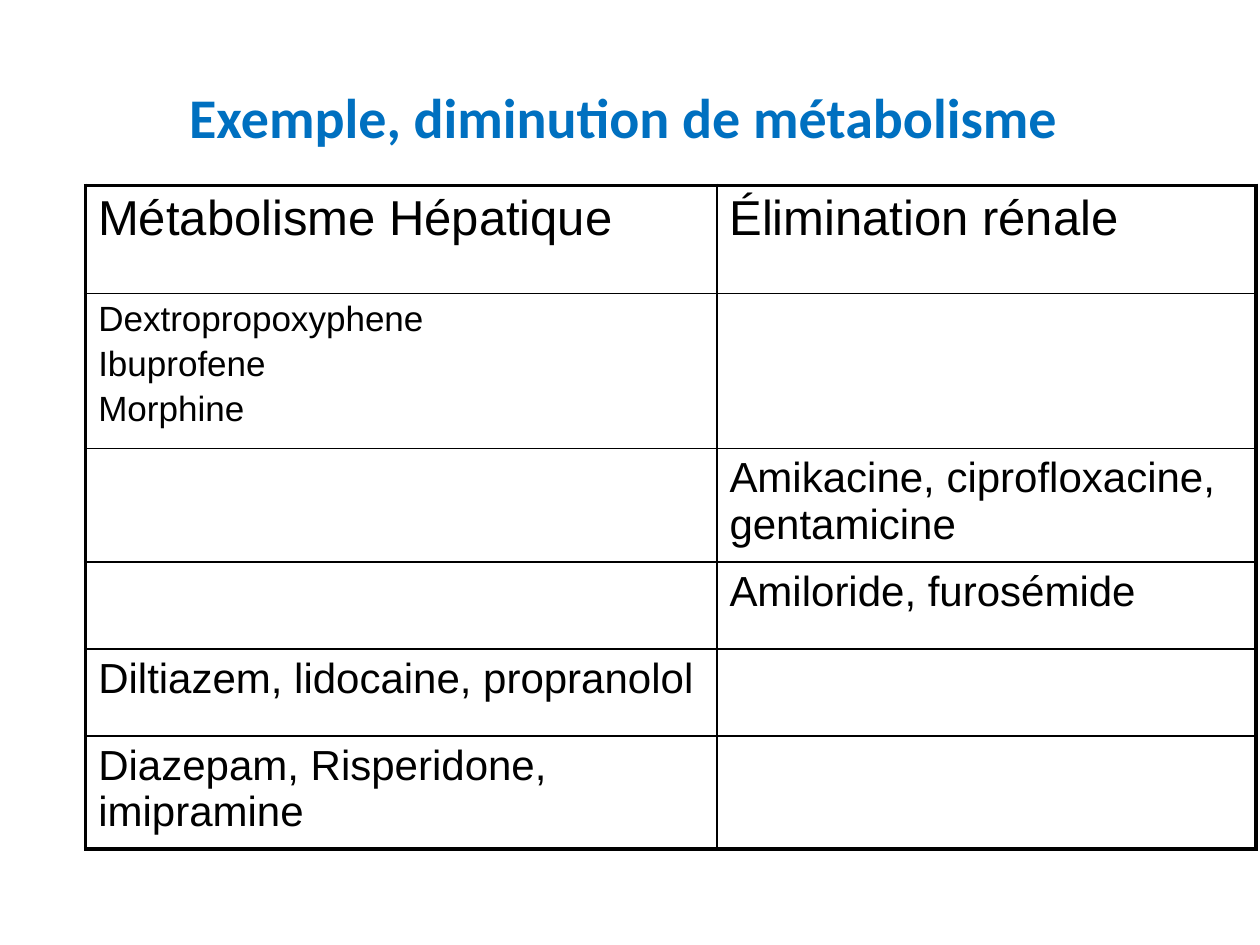
from lxml import etree
from pptx import Presentation
from pptx import util as u
from pptx.dml.color import RGBColor
from pptx.enum import text
from pptx.oxml import ns

BLUE = RGBColor(0x00, 0x70, 0xC0)
BLACK = RGBColor(0, 0, 0)
THICK, THIN = u.Pt(2.25), u.Pt(1)
COLUMN_WIDTHS = [5.01, 4.28]
ROW_HEIGHTS = [0.86, 1.23, 0.9, 0.69, 0.69, 0.9]
ROWS = [
    (28, ["Métabolisme Hépatique"], ["Élimination rénale"]),
    (20, ["Dextropropoxyphene", "Ibuprofene", "Morphine"], []),
    (24, [], ["Amikacine, ciprofloxacine, gentamicine"]),
    (24, [], ["Amiloride, furosémide"]),
    (24, ["Diltiazem, lidocaine, propranolol"], []),
    (24, ["Diazepam, Risperidone, imipramine"], []),
]


def set_borders(cell, widths):
    properties = cell._tc.get_or_add_tcPr()
    for index, (side, width) in enumerate(widths.items()):
        line = etree.Element(ns.qn(f"a:ln{side}"), w=str(width))
        fill = etree.SubElement(line, ns.qn("a:solidFill"))
        etree.SubElement(fill, ns.qn("a:srgbClr"), val=str(BLACK))
        properties.insert(index, line)


presentation = Presentation()
presentation.slide_width = u.Inches(10)
presentation.slide_height = u.Inches(7.5)
slide = presentation.slides.add_slide(presentation.slide_layouts[5])

title = slide.shapes.title
title.left, title.top = u.Inches(0.5), u.Inches(0.3)
title.width, title.height = u.Inches(9), u.Inches(1.25)
title.text_frame.vertical_anchor = text.MSO_ANCHOR.MIDDLE
paragraph = title.text_frame.paragraphs[0]
paragraph.alignment = text.PP_ALIGN.CENTER
run = paragraph.add_run()
run.text = "Exemple, diminution de métabolisme "
run.font.name = "Calibri"
run.font.size = u.Pt(32)
run.font.bold = True
run.font.color.rgb = BLUE

table = slide.shapes.add_table(
    len(ROWS), len(COLUMN_WIDTHS), u.Inches(0.68), u.Inches(1.47),
    u.Inches(sum(COLUMN_WIDTHS)), u.Inches(sum(ROW_HEIGHTS)),
).table
table.first_row = False
table.horz_banding = False
for column, width in zip(table.columns, COLUMN_WIDTHS):
    column.width = u.Inches(width)

last_row, last_column = len(ROWS) - 1, len(COLUMN_WIDTHS) - 1
for row_index, (size, *columns) in enumerate(ROWS):
    table.rows[row_index].height = u.Inches(ROW_HEIGHTS[row_index])
    for column_index, lines in enumerate(columns):
        cell = table.cell(row_index, column_index)
        cell.fill.background()
        set_borders(cell, {
            "L": THICK if column_index == 0 else THIN,
            "R": THICK if column_index == last_column else THIN,
            "T": THICK if row_index == 0 else THIN,
            "B": THICK if row_index == last_row else THIN,
        })
        for line_index, line in enumerate(lines):
            if line_index == 0:
                paragraph = cell.text_frame.paragraphs[0]
            else:
                paragraph = cell.text_frame.add_paragraph()
                paragraph.space_before = u.Pt(3.3)
            run = paragraph.add_run()
            run.text = line
            run.font.name = "Arial"
            run.font.size = u.Pt(size)
            run.font.color.rgb = BLACK

presentation.save("out.pptx")
